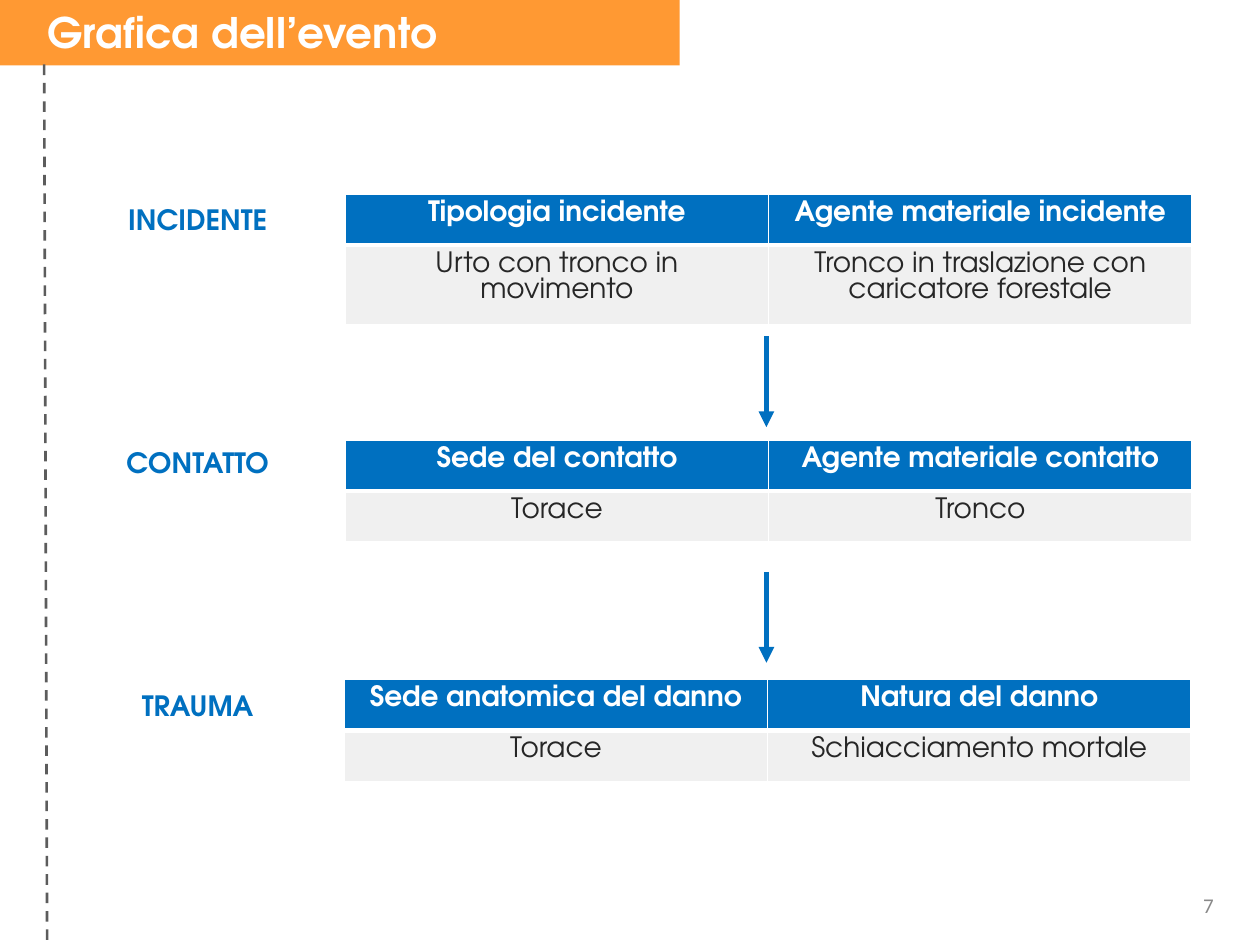
"""Build the slide that charts an event from incident to contact to trauma."""
from lxml import etree
from pptx import Presentation
from pptx.dml.color import RGBColor
from pptx.enum.dml import MSO_LINE
from pptx.enum.shapes import MSO_CONNECTOR, MSO_SHAPE
from pptx.enum.text import MSO_ANCHOR, PP_ALIGN
from pptx.oxml.ns import qn
from pptx.util import Cm, Pt

STRAIGHT = MSO_CONNECTOR.STRAIGHT
RECTANGLE = MSO_SHAPE.RECTANGLE
DASH = MSO_LINE.DASH
TOP, MIDDLE = MSO_ANCHOR.TOP, MSO_ANCHOR.MIDDLE
LEFT, CENTER, RIGHT = PP_ALIGN.LEFT, PP_ALIGN.CENTER, PP_ALIGN.RIGHT

ORANGE = RGBColor(0xFF, 0x99, 0x33)
BLUE = RGBColor(0x00, 0x70, 0xC0)
WHITE = RGBColor(0xFF, 0xFF, 0xFF)
PALE_GRAY = RGBColor(0xF0, 0xF0, 0xF0)
MID_GRAY = RGBColor(0x89, 0x89, 0x89)
DARK_GRAY = RGBColor(0x5C, 0x5C, 0x5C)
INK = RGBColor(0x26, 0x26, 0x26)
FONT = "TeX Gyre Adventor"

presentation = Presentation()
presentation.slide_width = Cm(25.4)
presentation.slide_height = Cm(19.05)
slide = presentation.slides.add_slide(presentation.slide_layouts[6])


def write(frame, text, size, color, bold, align, font=FONT):
    paragraph = frame.paragraphs[0]
    paragraph.alignment = align
    run = paragraph.add_run()
    run.text = text
    run.font.name = font
    run.font.size = Pt(size)
    run.font.bold = bold
    run.font.color.rgb = color
    return paragraph


def add_line(start_x, start_y, end_x, end_y, color, width):
    connector = slide.shapes.add_connector(
        STRAIGHT, Cm(start_x), Cm(start_y), Cm(end_x), Cm(end_y))
    connector.line.color.rgb = color
    connector.line.width = Pt(width)
    properties = connector._element.spPr
    etree.SubElement(properties, qn("a:effectLst"))
    return connector


banner = slide.shapes.add_shape(RECTANGLE, Cm(-0.3), Cm(0), Cm(14), Cm(1.32))
banner.shadow.inherit = False
banner.fill.solid()
banner.fill.fore_color.rgb = ORANGE
banner.line.fill.background()

margin_line = add_line(0.89, 1.3, 0.95, 19.05, DARK_GRAY, 1.5)
margin_line.line.dash_style = DASH

text_boxes = [
    ("7", 23.3, 17.86, 1.42, 1.07, 12, MID_GRAY, False, RIGHT, TOP, "Calibri"),
    ("Grafica dell’evento", 0.71, 0, 19.89, 1.27, 24, WHITE, True, LEFT, TOP, FONT),
    ("INCIDENTE", 1.7, 3.91, 4.57, 1.02, 16, BLUE, True, CENTER, MIDDLE, FONT),
    ("CONTATTO", 1.7, 8.81, 4.57, 1.02, 16, BLUE, True, CENTER, MIDDLE, FONT),
    ("TRAUMA", 1.7, 13.7, 4.57, 1.02, 16, BLUE, True, CENTER, MIDDLE, FONT),
]
for text, left, top, width, height, size, color, bold, align, anchor, font in text_boxes:
    box = slide.shapes.add_textbox(Cm(left), Cm(top), Cm(width), Cm(height))
    box.text_frame.word_wrap = True
    box.text_frame.vertical_anchor = anchor
    write(box.text_frame, text, size, color, bold, align, font)

tables = [
    (6.96, 3.91, 1.6, [
        ("Tipologia incidente", "Agente materiale incidente"),
        ("Urto con tronco in movimento", "Tronco in traslazione con caricatore forestale")]),
    (6.96, 8.87, 1.03, [
        ("Sede del contatto", "Agente materiale contatto"),
        ("Torace", "Tronco")]),
    (6.94, 13.7, 1.03, [
        ("Sede anatomica del danno", "Natura del danno"),
        ("Torace", "Schiacciamento mortale")]),
]
row_styles = [(BLUE, WHITE, True, 3), (PALE_GRAY, INK, False, 1)]
for left, top, body_height, rows in tables:
    table = slide.shapes.add_table(
        2, 2, Cm(left), Cm(top), Cm(17.07), Cm(1.03 + body_height)).table
    table.rows[0].height = Cm(1.03)
    table.rows[1].height = Cm(body_height)
    for row_index, (fill, ink, bold, bottom_width) in enumerate(row_styles):
        for column_index, text in enumerate(rows[row_index]):
            cell = table.cell(row_index, column_index)
            paragraph = write(cell.text_frame, text, 16, ink, bold, CENTER)
            paragraph.line_spacing = Pt(15)
            cell_properties = cell._tc.get_or_add_tcPr()
            for side, width in zip("LRTB", (1, 1, 1, bottom_width)):
                border = etree.SubElement(
                    cell_properties, qn(f"a:ln{side}"), w=str(Pt(width)))
                border_fill = etree.SubElement(border, qn("a:solidFill"))
                etree.SubElement(border_fill, qn("a:srgbClr"), val=str(WHITE))
            cell.fill.solid()
            cell.fill.fore_color.rgb = fill

for arrow_top in (6.78, 11.53):
    arrow = add_line(15.45, arrow_top, 15.45, arrow_top + 1.83, BLUE, 3)
    etree.SubElement(arrow.line._get_or_add_ln(), qn("a:tailEnd"), type="triangle")

presentation.save("out.pptx")
